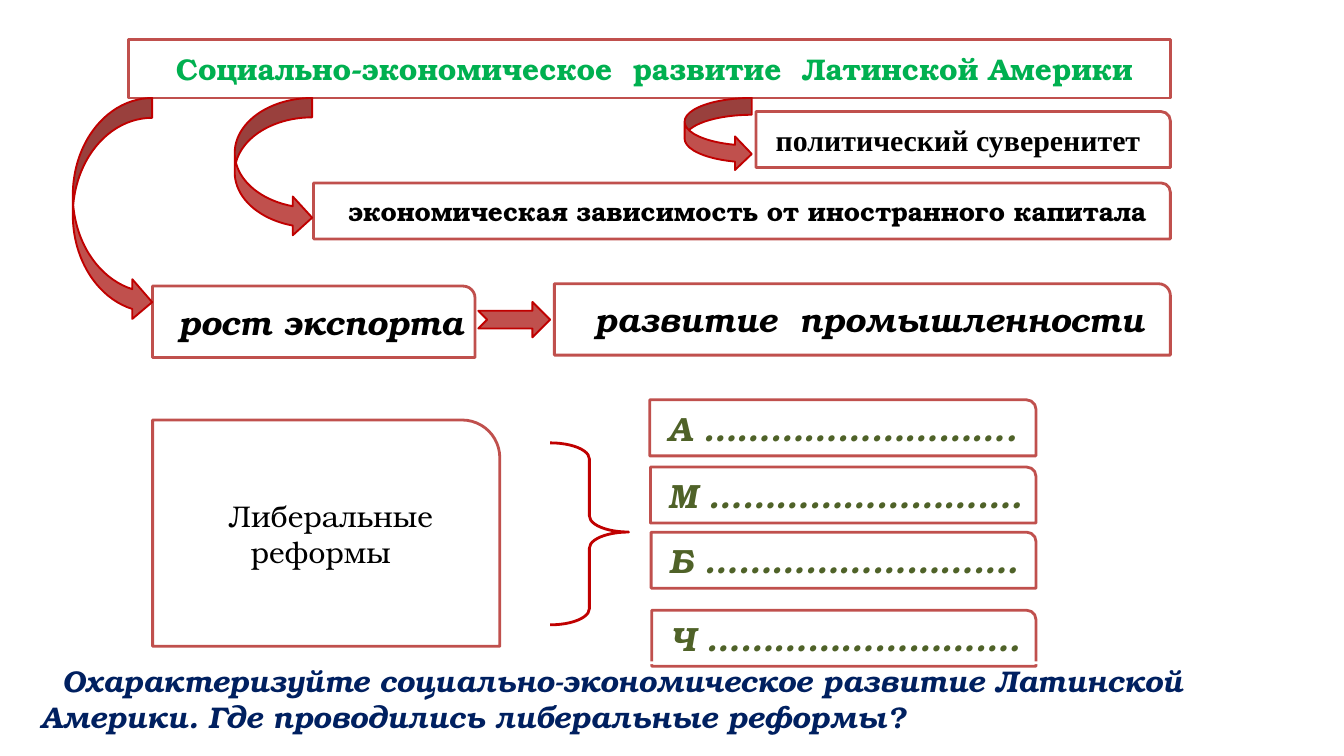
from dataclasses import dataclass

from lxml.etree import SubElement
from pptx import Presentation
from pptx.dml.color import RGBColor
from pptx.enum.shapes import MSO_SHAPE as SHAPE
from pptx.enum.text import MSO_ANCHOR, MSO_AUTO_SIZE, PP_ALIGN
from pptx.oxml.ns import qn
from pptx.util import Pt


@dataclass(frozen=True)
class Theme:
    white: str = "FFFFFF"
    black: str = "000000"
    border: str = "C0504D"
    accent: str = "C00000"
    title: str = "00B050"
    answer: str = "4F6228"
    question: str = "002060"
    serif: str = "TeX Gyre Bonum"
    roman: str = "Times New Roman"
    small: int = 28
    medium: int = 32
    large: int = 36
    border_width: int = 3
    arrow_width: int = 2


T = Theme()
CENTER, LEFT = PP_ALIGN.CENTER, PP_ALIGN.LEFT

PLAIN = dict(name=T.serif, size=T.medium, color=T.black, bold=False, italic=False)
TITLE = PLAIN | dict(color=T.title, bold=True)
SOVEREIGNTY = PLAIN | dict(name=T.roman, bold=True)
DEPENDENCE = PLAIN | dict(size=T.small, bold=True)
GROWTH = PLAIN | dict(size=T.large, bold=True, italic=True)
ANSWER = GROWTH | dict(color=T.answer)
QUESTION = PLAIN | dict(color=T.question, bold=True, italic=True)


def rgb(value):
    return RGBColor.from_string(value)


def paint(sp, fill, line, width):
    """Set fill (None for no fill) and outline, and drop the shadow."""
    if fill:
        sp.fill.solid()
        sp.fill.fore_color.rgb = rgb(fill)
    else:
        sp.fill.background()
    sp.line.color.rgb = rgb(line)
    sp.line.width = Pt(width)
    sp.shadow.inherit = False


def write(sp, text, style, align, indent, right_inset=7.2):
    """Put one paragraph in a shape; indent moves its first line."""
    tf = sp.text_frame
    frame = dict(word_wrap=True, auto_size=MSO_AUTO_SIZE.NONE,
                 vertical_anchor=MSO_ANCHOR.MIDDLE, margin_right=Pt(right_inset))
    for key, value in frame.items():
        setattr(tf, key, value)
    p = tf.paragraphs[0]
    p.alignment = align
    pPr = p._p.get_or_add_pPr()
    pPr.set("marL", "0")
    pPr.set("indent", str(Pt(indent)))
    r = p.add_run()
    r.text = text
    for key, value in style.items():
        if key == "color":
            r.font.color.rgb = rgb(value)
        else:
            setattr(r.font, key, Pt(value) if key == "size" else value)


def add_preset(s, kind, box, fill=T.border, line=T.accent, width=T.arrow_width):
    sp = s.shapes.add_shape(kind, *map(Pt, box))
    paint(sp, fill, line, width)
    return sp


def add_box(s, box, text, style, align=CENTER, indent=0,
            fill=T.white, line=T.border, right_inset=7.2):
    sp = add_preset(s, SHAPE.ROUND_1_RECTANGLE, box, fill, line, T.border_width)
    write(sp, text, style, align, indent, right_inset)


def set_title(s, box, text):
    """Turn the title placeholder into a framed box with one round corner."""
    sp = s.shapes.title
    for key, value in zip(("left", "top", "width", "height"), box):
        setattr(sp, key, Pt(value))
    geometry = SubElement(sp._element.spPr, qn("a:prstGeom"), prst="round1Rect")
    SubElement(geometry, qn("a:avLst"))
    paint(sp, T.white, T.border, T.border_width)
    write(sp, text, TITLE, CENTER, indent=11)


def add_brace(s, box):
    sp = add_preset(s, SHAPE.RIGHT_BRACE, box, fill=None, width=T.border_width)
    sp.adjustments[0] = 0.206
    sp.adjustments[1] = 0.49


def add_answers(s, right=1110, height=60):
    tops = (428.4, 500.4, 570.2, 653.8)
    for i, (letter, top) in enumerate(zip("АМБЧ", tops)):
        left = 696.2 + 0.7 * i
        add_box(s, (left, top, right - left, height),
                f"{letter} ……………………….", ANSWER, LEFT, indent=12)


def main():
    prs = Presentation()
    prs.slide_width, prs.slide_height = Pt(1440), Pt(810)
    s = prs.slides.add_slide(prs.slide_layouts[5])

    set_title(s, (138, 42, 1116, 63),
              "Социально-экономическое  развитие  Латинской Америки")
    add_box(s, (810, 119.5, 444, 60), "политический суверенитет", SOVEREIGNTY,
            right_inset=15)
    add_box(s, (336, 196, 918, 60),
            "экономическая зависимость от иностранного капитала",
            DEPENDENCE, indent=14.5)
    add_box(s, (163.5, 306.5, 345.5, 76.5), "рост экспорта", GROWTH, indent=18.5)
    add_box(s, (594, 304, 660, 76.5), "развитие  промышленности", GROWTH,
            indent=18.5)

    for box in ((733.5, 105, 72, 78), (251.5, 105, 83, 149), (78, 105, 85, 240)):
        add_preset(s, SHAPE.CURVED_RIGHT_ARROW, box)
    add_preset(s, SHAPE.NOTCHED_RIGHT_ARROW, (512.5, 323.5, 77, 38))

    add_box(s, (163.5, 450, 372, 242.5), "Либеральные реформы", PLAIN, indent=22)
    add_brace(s, (589.5, 474.5, 84, 195))
    add_answers(s)
    add_box(s, (36.5, 710, 1307, 76.5),
            "Охарактеризуйте социально-экономическое развитие Латинской "
            "Америки. Где проводились либеральные реформы?",
            QUESTION, LEFT, indent=23, fill=None, line=T.white)

    prs.save("out.pptx")


if __name__ == "__main__":
    main()
